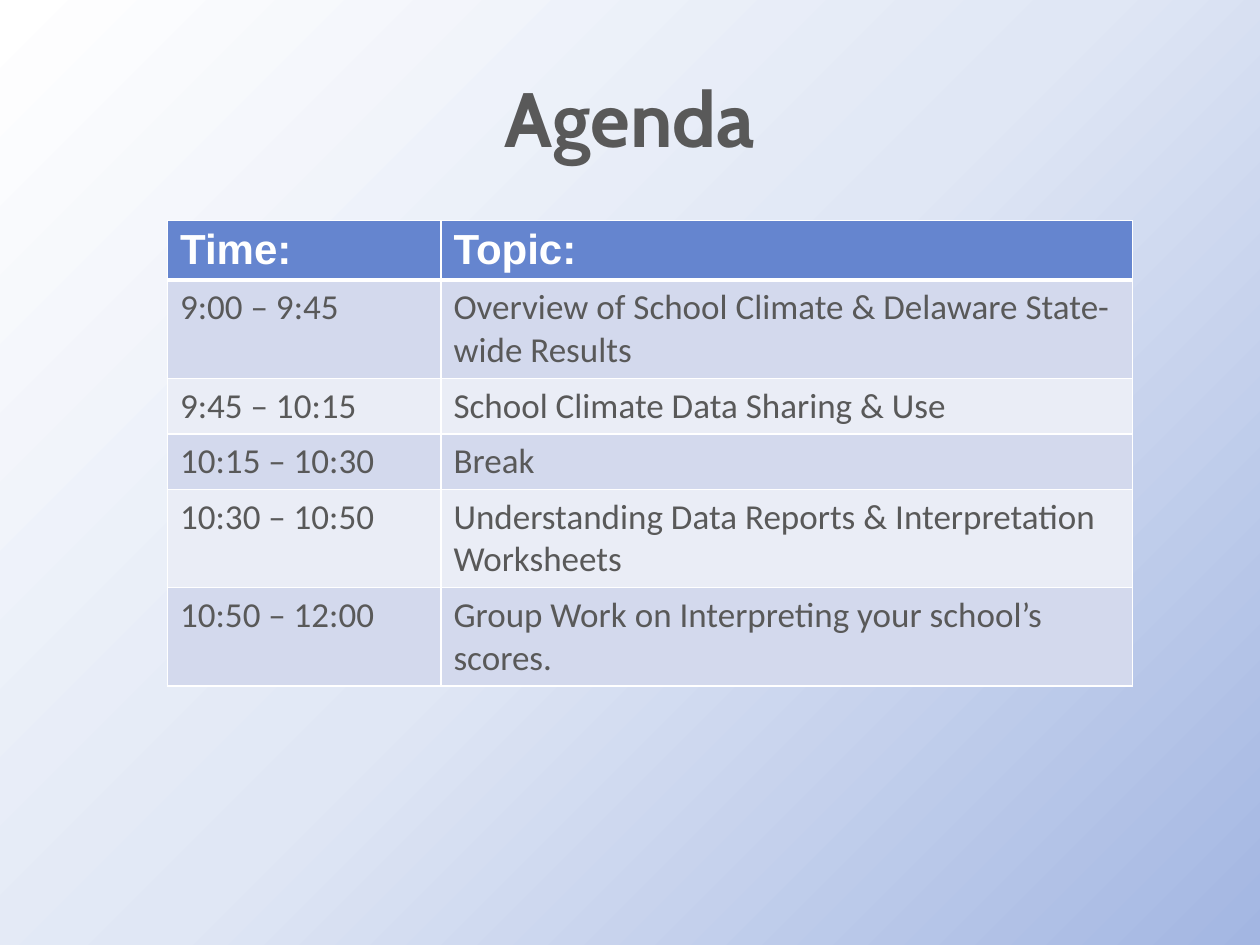
from typing import NamedTuple

from pptx import Presentation
from pptx.dml.color import RGBColor
from pptx.enum import text
from pptx.oxml import parse_xml
from pptx.oxml.ns import nsdecls
from pptx.util import Inches, Pt

WHITE = "FFFFFF"
GREY = "595959"
HEADER_BLUE = "6585CF"
ROW_BANDS = ("D3D9ED", "EAEDF6")
BACKGROUND_STOPS = ((0, "A3B6E2"), (50, "E0E7F5"), (100, WHITE))


class Session(NamedTuple):
    time: str
    topic: str


HEADINGS = Session("Time:", "Topic:")
SESSIONS = (
    Session("9:00 – 9:45", "Overview of School Climate & Delaware State-wide Results"),
    Session("9:45 – 10:15", "School Climate Data Sharing & Use"),
    Session("10:15 – 10:30", "Break"),
    Session("10:30 – 10:50", "Understanding Data Reports & Interpretation Worksheets"),
    Session("10:50 – 12:00", "Group Work on Interpreting your school’s scores."),
)
COLUMN_WIDTHS = (2.17, 5.49)
ROW_HEIGHT = 0.41


def rgb(value: str) -> RGBColor:
    return RGBColor.from_string(value)


def write(frame, wording: str, *, font: str, size: float, color: str,
          bold: bool = False, align=text.PP_ALIGN.LEFT) -> None:
    paragraph = frame.paragraphs[0]
    paragraph.alignment = align
    run = paragraph.add_run()
    run.text = wording
    run.font.name = font
    run.font.size = Pt(size)
    run.font.bold = bold
    run.font.color.rgb = rgb(color)


def paint_background(slide) -> None:
    fill = slide.background.fill
    fill.gradient()
    stops = "".join(
        f'<a:gs pos="{position * 1000}"><a:srgbClr val="{color}"/></a:gs>'
        for position, color in BACKGROUND_STOPS
    )
    gradient = parse_xml(
        f'<a:gradFill {nsdecls("a")} rotWithShape="1"><a:gsLst>{stops}</a:gsLst>'
        '<a:path path="circle"><a:fillToRect l="100000" t="100000"/></a:path>'
        '</a:gradFill>'
    )
    properties = slide.background._cSld.bg.bgPr
    properties.replace(properties[0], gradient)


def border_cell(cell, top: float = 1, bottom: float = 1) -> None:
    properties = cell._tc.get_or_add_tcPr()
    edges = (("lnL", 1), ("lnR", 1), ("lnT", top), ("lnB", bottom))
    for index, (edge, width) in enumerate(edges):
        properties.insert(index, parse_xml(
            f'<a:{edge} {nsdecls("a")} w="{Pt(width)}"><a:solidFill>'
            f'<a:srgbClr val="{WHITE}"/></a:solidFill></a:{edge}>'
        ))


def add_agenda(slide, sessions: tuple[Session, ...]) -> None:
    rows = (HEADINGS, *sessions)
    frame = slide.shapes.add_table(
        len(rows), len(COLUMN_WIDTHS),
        Inches(1.33), Inches(1.75), Inches(7.67), Inches(3.57),
    )
    agenda = frame.table
    for column, width in zip(agenda.columns, COLUMN_WIDTHS):
        column.width = Inches(width)
    for index, session in enumerate(rows):
        agenda.rows[index].height = Inches(ROW_HEIGHT)
        header = index == 0
        for cell, wording in zip(agenda.rows[index].cells, session):
            cell.fill.solid()
            cell.fill.fore_color.rgb = rgb(
                HEADER_BLUE if header else ROW_BANDS[(index - 1) % 2]
            )
            border_cell(cell, top=3 if index == 1 else 1, bottom=3 if header else 1)
            if header:
                write(cell.text_frame, wording, font="Arial", size=24,
                      color=WHITE, bold=True)
            else:
                write(cell.text_frame, wording, font="Calibri", size=20, color=GREY)


def main() -> None:
    deck = Presentation()
    deck.slide_width, deck.slide_height = Inches(10), Inches(7.5)
    slide = deck.slides.add_slide(deck.slide_layouts[5])
    paint_background(slide)

    title = slide.shapes.title
    title.left, title.top = Inches(0.5), Inches(0.3)
    title.width, title.height = Inches(9), Inches(1.25)
    title.text_frame.vertical_anchor = text.MSO_ANCHOR.MIDDLE
    write(title.text_frame, "Agenda", font="Cabin", size=44, color=GREY,
          bold=True, align=text.PP_ALIGN.CENTER)

    add_agenda(slide, SESSIONS)
    deck.save("out.pptx")


if __name__ == "__main__":
    main()
